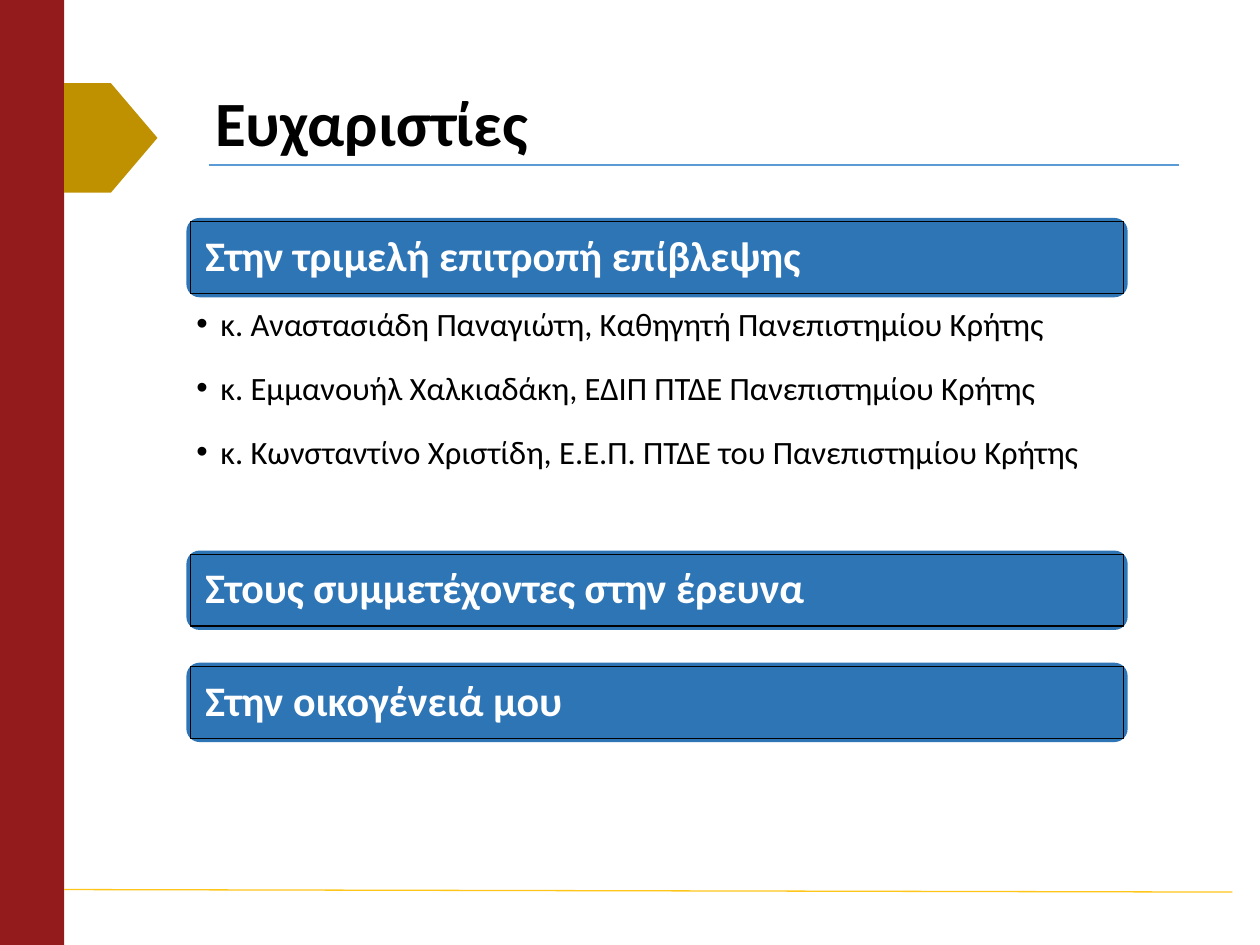
"""Build the acknowledgements slide with its title, banners and bullet list."""
import pptx
import pptx.dml.color
import pptx.enum.shapes
import pptx.enum.text
import pptx.util
from lxml import etree
from pptx.oxml.ns import qn

Inches = pptx.util.Inches
Pt = pptx.util.Pt
Kind = pptx.enum.shapes.MSO_SHAPE
HUES = {"red": "931B1B", "gold": "BF9000", "blue": "2E75B6", "rule": "5B9BD5",
        "foot": "FFC61A", "black": "000000", "white": "FFFFFF"}
RGB = {name: pptx.dml.color.RGBColor.from_string(hue) for name, hue in HUES.items()}


def add_box(kind, left, top, width, height, fill):
    box = slide.shapes.add_shape(kind, Inches(left), Inches(top), Inches(width), Inches(height))
    box.shadow.inherit = False
    box.fill.solid()
    box.fill.fore_color.rgb = RGB[fill]
    box.line.fill.background()
    return box


def style(para, size, color, bold, space):
    para.alignment = pptx.enum.text.PP_ALIGN.LEFT
    para.line_spacing = space
    font = para.runs[0].font
    font.name = "Calibri"
    font.size = Pt(size)
    font.bold = bold
    font.color.rgb = RGB[color]


deck = pptx.Presentation()
deck.slide_width = Inches(10)
deck.slide_height = Inches(7.5)
slide = deck.slides.add_slide(deck.slide_layouts[6])

add_box(Kind.RECTANGLE, 0, 0, 0.51, 7.5, "red")
tag = add_box(Kind.PENTAGON, 0.51, 0.66, 0.74, 0.87, "gold")
tag.adjustments[0] = 0.5

rules = [(1.66, 1.31, 9.36, 1.31, "rule"), (0.51, 7.06, 9.78, 7.08, "foot")]
for *ends, hue in rules:
    rule = slide.shapes.add_connector(
        pptx.enum.shapes.MSO_CONNECTOR.STRAIGHT, *[Inches(end) for end in ends])
    rule.line.color.rgb = RGB[hue]
    rule.line.width = Pt(0.75)
    etree.SubElement(rule._element.spPr, qn("a:effectLst"))

title = slide.shapes.add_textbox(Inches(1.61), Inches(0.44), Inches(7.7), Inches(1.13))
frame = title.text_frame
frame.word_wrap = True
frame.vertical_anchor = pptx.enum.text.MSO_ANCHOR.MIDDLE
frame.text = "Ευχαριστίες"
style(frame.paragraphs[0], 36, "black", True, 0.9)

names = [
    "κ. Αναστασιάδη Παναγιώτη, Καθηγητή Πανεπιστημίου Κρήτης",
    "κ. Εμμανουήλ Χαλκιαδάκη, ΕΔΙΠ ΠΤΔΕ Πανεπιστημίου Κρήτης",
    "κ. Κωνσταντίνο Χριστίδη, Ε.Ε.Π. ΠΤΔΕ του Πανεπιστημίου Κρήτης",
]
body = slide.shapes.add_textbox(Inches(1.46), Inches(2.27), Inches(7.41), Inches(2.03))
frame = body.text_frame
frame.word_wrap = True
frame.text = "\n".join(names)
for para in frame.paragraphs:
    style(para, 18.6, "black", False, 1.3)
    para.space_before = Pt(7.5)
    props = para._p.get_or_add_pPr()
    props.set("marL", str(Inches(0.19)))
    props.set("indent", str(-Inches(0.19)))
    etree.SubElement(props, qn("a:buFont"), typeface="Arial")
    etree.SubElement(props, qn("a:buChar"), char="•")

banners = [
    (1.73, "Στην τριμελή επιτροπή επίβλεψης"),
    (4.37, "Στους συμμετέχοντες στην έρευνα"),
    (5.26, "Στην οικογένειά μου"),
]
for top, text in banners:
    add_box(Kind.ROUNDED_RECTANGLE, 1.48, top, 7.47, 0.63, "blue")
    label = add_box(Kind.RECTANGLE, 1.51, top + 0.03, 7.41, 0.57, "blue")
    label.line.color.rgb = RGB["black"]
    label.line.width = Pt(0.75)
    frame = label.text_frame
    frame.word_wrap = True
    frame.vertical_anchor = pptx.enum.text.MSO_ANCHOR.MIDDLE
    frame.margin_left = frame.margin_right = Inches(0.12)
    frame.margin_top = frame.margin_bottom = Inches(0.12)
    frame.text = text
    style(frame.paragraphs[0], 24, "white", True, 0.9)

deck.save("out.pptx")
